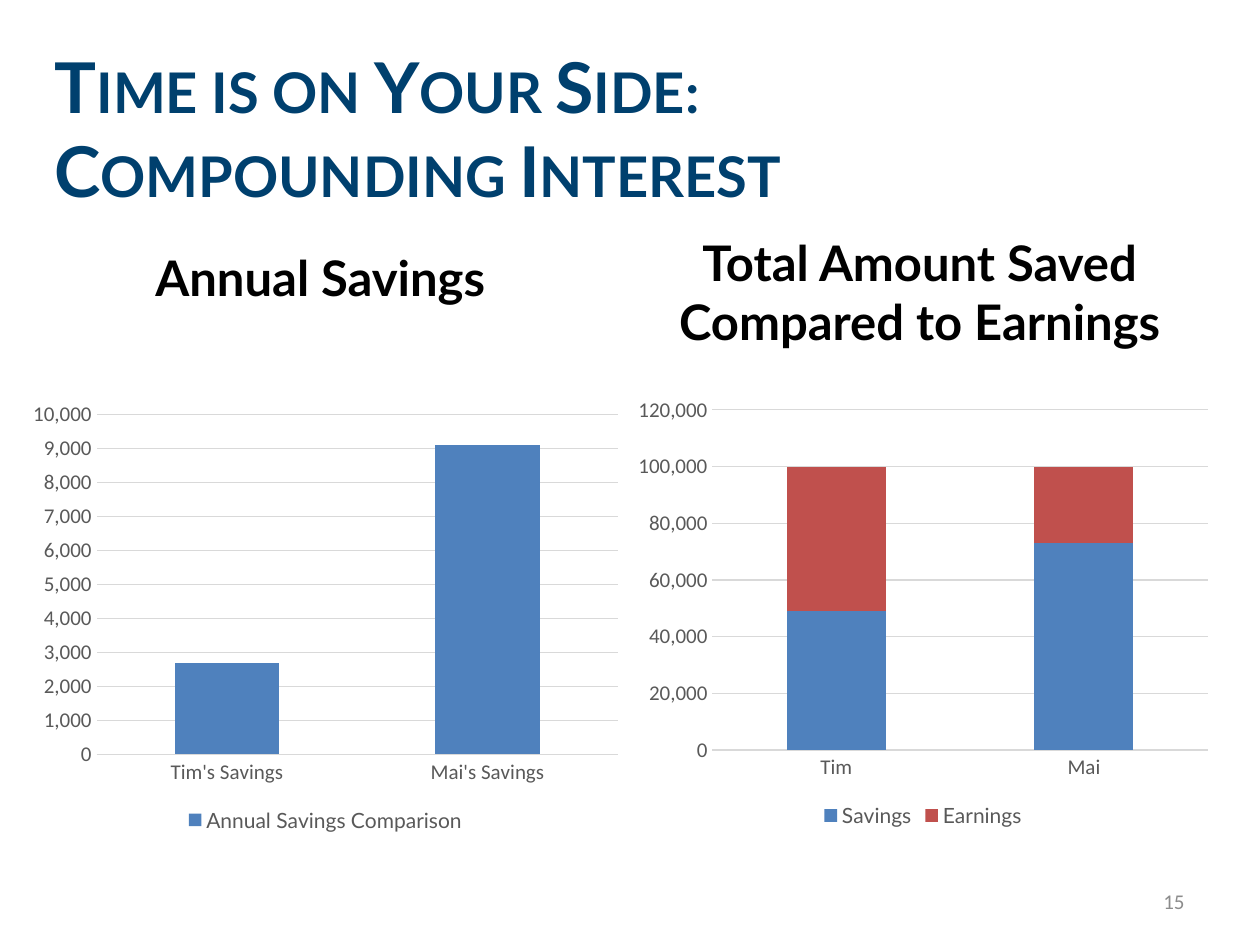
import pptx
import pptx.chart.data
import pptx.dml.color
import pptx.enum.chart
import pptx.enum.text
import pptx.util
from dataclasses import dataclass

Pt = pptx.util.Pt
Align = pptx.enum.text.PP_ALIGN
Anchor = pptx.enum.text.MSO_ANCHOR


@dataclass(frozen=True)
class Theme:
    heading_font: str = "Lato"
    plain_font: str = "Calibri"
    title: str = "00406E"
    heading: str = "000000"
    axis_text: str = "595959"
    grid: str = "D9D9D9"
    number: str = "8C8C8C"
    series: tuple = ("4F81BD", "C0504D")
    title_size: int = 40
    heading_size: int = 28
    small_size: int = 12
    inset: float = 7.2
    grid_width: float = 0.75


def rgb(value):
    return pptx.dml.color.RGBColor.from_string(value)


class SlideBuilder:
    def __init__(self, deck, theme):
        self.theme = theme
        self.slide = deck.slides.add_slide(deck.slide_layouts.get_by_name("Comparison"))
        self.holders = {holder.placeholder_format.idx: holder
                        for holder in self.slide.placeholders}

    def style_font(self, font, name, size, color, bold=False):
        font.name, font.size, font.bold = name, Pt(size), bold
        font.color.rgb = rgb(color)

    def fill_box(self, box, place, text, align, anchor, **font_style):
        box.left, box.top, box.width, box.height = map(Pt, place)
        frame = box.text_frame
        frame.text = text
        frame.word_wrap = True
        frame.auto_size = pptx.enum.text.MSO_AUTO_SIZE.NONE
        frame.vertical_anchor = anchor
        for para in frame.paragraphs:
            para.alignment = align
            para.space_before = Pt(0)
            for span in para.runs:
                self.style_font(span.font, **font_style)
        return frame

    def set_insets(self, frame):
        inset = Pt(self.theme.inset)
        frame.margin_left = frame.margin_right = inset
        frame.margin_top = frame.margin_bottom = inset

    def title(self, place, text):
        theme = self.theme
        frame = self.fill_box(self.slide.shapes.title, place, text, Align.LEFT, Anchor.MIDDLE,
                              name=theme.heading_font, size=theme.title_size,
                              color=theme.title, bold=True)
        self.set_insets(frame)
        for para in frame.paragraphs:
            for span in para.runs:
                span.font._element.set("cap", "small")

    def heading(self, index, place, text):
        theme = self.theme
        frame = self.fill_box(self.holders[index], place, text, Align.CENTER, Anchor.BOTTOM,
                              name=theme.heading_font, size=theme.heading_size,
                              color=theme.heading, bold=True)
        self.set_insets(frame)

    def slide_number(self, place, text):
        theme = self.theme
        box = self.slide.shapes.add_textbox(*map(Pt, place))
        self.fill_box(box, place, text, Align.RIGHT, Anchor.MIDDLE,
                      name=theme.plain_font, size=theme.small_size, color=theme.number)

    def style_line(self, line):
        line.color.rgb = rgb(self.theme.grid)
        line.width = Pt(self.theme.grid_width)

    def stacked_chart(self, place, categories, series, maximum, step):
        theme = self.theme
        data = pptx.chart.data.CategoryChartData(number_format="#,##0")
        data.categories = categories
        for name, values in series.items():
            data.add_series(name, values)
        chart = self.slide.shapes.add_chart(
            pptx.enum.chart.XL_CHART_TYPE.COLUMN_STACKED, *map(Pt, place), data).chart
        chart.has_title = False
        self.style_font(chart.font, theme.plain_font, theme.small_size, theme.axis_text)

        plot = chart.plots[0]
        plot.gap_width, plot.overlap, plot.vary_by_categories = 150, 100, False
        for bars, color in zip(plot.series, theme.series):
            bars.format.fill.solid()
            bars.format.fill.fore_color.rgb = rgb(color)

        for axis in (chart.category_axis, chart.value_axis):
            axis.major_tick_mark = axis.minor_tick_mark = pptx.enum.chart.XL_TICK_MARK.NONE
            self.style_font(axis.tick_labels.font, theme.plain_font,
                            theme.small_size, theme.axis_text)
        self.style_line(chart.category_axis.format.line)
        scale = chart.value_axis
        scale.minimum_scale, scale.maximum_scale, scale.major_unit = 0, maximum, step
        scale.format.line.fill.background()
        self.style_line(scale.major_gridlines.format.line)
        scale.tick_labels.number_format = "#,##0"
        scale.tick_labels.number_format_is_linked = False

        chart.has_legend = True
        chart.legend.position = pptx.enum.chart.XL_LEGEND_POSITION.BOTTOM
        chart.legend.include_in_layout = False
        self.style_font(chart.legend.font, theme.heading_font,
                        theme.small_size, theme.axis_text)

    def remove_empty_placeholders(self):
        for holder in list(self.slide.placeholders):
            if not holder.text_frame.text:
                holder._element.getparent().remove(holder._element)


def main():
    deck = pptx.Presentation()
    deck.slide_width, deck.slide_height = Pt(720), Pt(540)
    page = SlideBuilder(deck, Theme())
    page.title((24, 19, 430, 108), "Time is on Your Side:\nCompounding Interest")
    page.heading(1, (24, 145, 318, 37), "Annual Savings")
    page.heading(3, (366.5, 140, 318, 67.5), "Total Amount Saved Compared to Earnings")
    page.stacked_chart((12, 224.5, 348, 254), ["Tim's Savings", "Mai's Savings"],
                       {"Annual Savings Comparison": (2700, 9100)}, 10000, 1000)
    page.stacked_chart((358, 222, 339, 254), ["Tim", "Mai"],
                       {"Savings": (49000, 73000), "Earnings": (51000, 27000)}, 120000, 20000)
    page.slide_number((516, 500.5, 168, 29), "15")
    page.remove_empty_placeholders()
    deck.save("out.pptx")


if __name__ == "__main__":
    main()
